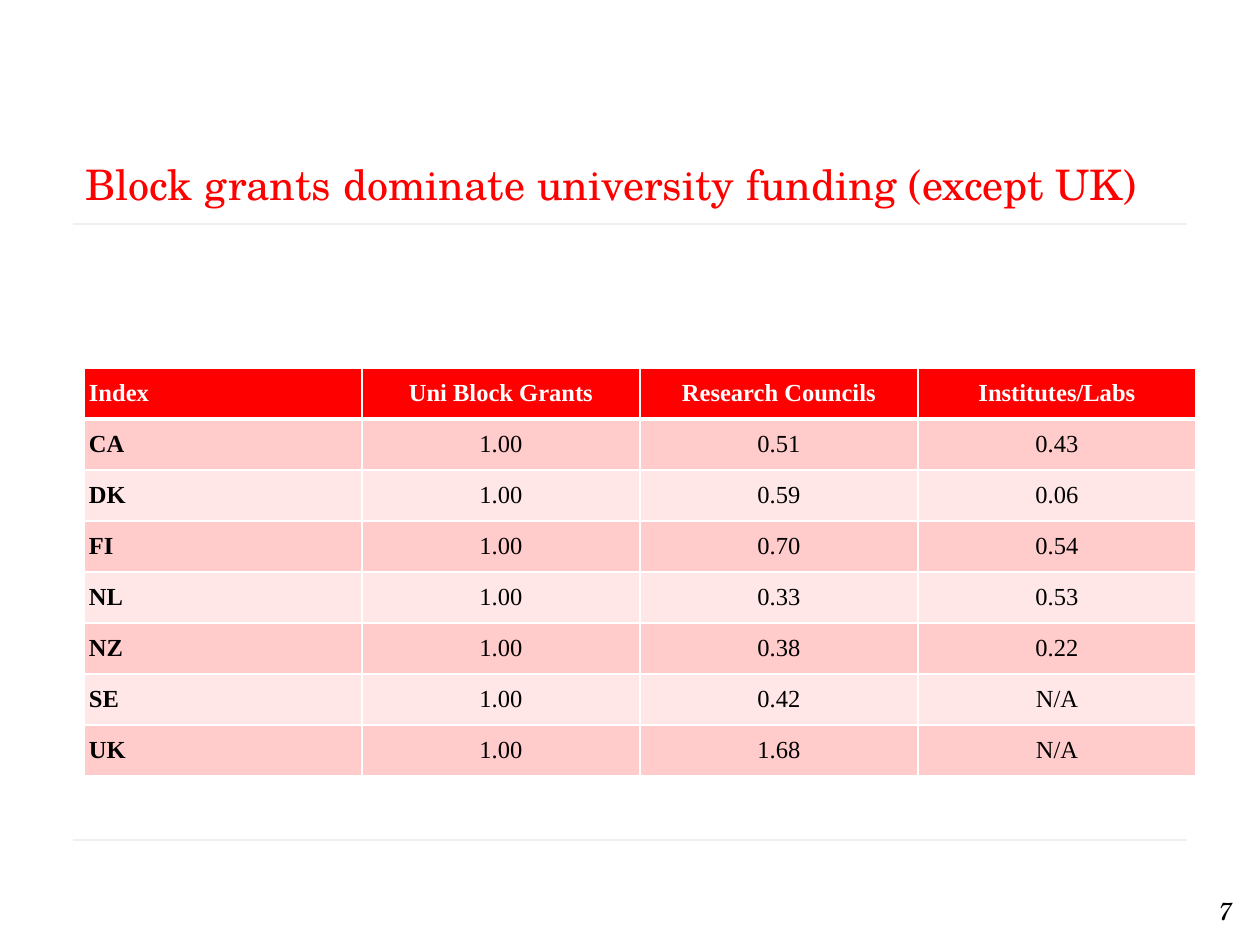
from lxml import etree
from pptx import Presentation
from pptx.dml.color import RGBColor
from pptx.enum.shapes import MSO_CONNECTOR
from pptx.enum.text import MSO_ANCHOR, PP_ALIGN
from pptx.oxml import parse_xml
from pptx.oxml.ns import qn
from pptx.util import Emu, Pt

STRAIGHT = MSO_CONNECTOR.STRAIGHT
MIDDLE, TOP = MSO_ANCHOR.MIDDLE, MSO_ANCHOR.TOP
LEFT, CENTER, RIGHT, JUSTIFY = (
    PP_ALIGN.LEFT, PP_ALIGN.CENTER, PP_ALIGN.RIGHT, PP_ALIGN.JUSTIFY)
NS = "http://schemas.openxmlformats.org/drawingml/2006/main"

THEME = {
    "red": "FF0000", "white": "FFFFFF", "black": "000000", "rule": "808080",
    "bands": ("FFCBCB", "FFE7E7"),
    "serif": "TeX Gyre Schola", "table_font": "Times New Roman",
    "title_size": 24, "body_size": 14,
}


def px(n):
    return Emu(round(n * 914400 / 126))


def write(tf, text, align, anchor, color, **font):
    tf.word_wrap = True
    tf.vertical_anchor = anchor
    p = tf.paragraphs[0]
    p.alignment = align
    r = p.add_run()
    r.text = text
    r.font.color.rgb = RGBColor.from_string(color)
    for name, value in font.items():
        setattr(r.font, name, value)


prs = Presentation()
prs.slide_width, prs.slide_height = px(1260), px(945)
s = prs.slides.add_slide(prs.slide_layouts[6])

# Thin rules below the title and above the footer
for y in (840, 224):
    rule = s.shapes.add_connector(STRAIGHT, px(73), px(y), px(1187), px(y))
    rule.line.width = Pt(0.5)
    rule.line.color.rgb = RGBColor.from_string(THEME["rule"])
    color = rule.line._ln.find(".//" + qn("a:srgbClr"))
    etree.SubElement(color, qn("a:alpha")).set("val", "35000")
    etree.SubElement(rule._element.spPr, qn("a:effectLst"))

# Page number and title
body, title = Pt(THEME["body_size"]), Pt(THEME["title_size"])
number_box = s.shapes.add_textbox(px(1096), px(890), px(149), px(41))
write(number_box.text_frame, "7", RIGHT, TOP, THEME["black"],
      name=THEME["serif"], size=body, italic=True)
title_box = s.shapes.add_textbox(px(73), px(147), px(1113), px(73))
write(title_box.text_frame, "Block grants dominate university funding (except UK)",
      LEFT, MIDDLE, THEME["red"], name=THEME["serif"], size=title)

# Funding index table
rows = [
    ("Index", "Uni Block Grants", "Research Councils", "Institutes/Labs"),
    ("CA", "1.00", "0.51", "0.43"),
    ("DK", "1.00", "0.59", "0.06"),
    ("FI", "1.00", "0.70", "0.54"),
    ("NL", "1.00", "0.33", "0.53"),
    ("NZ", "1.00", "0.38", "0.22"),
    ("SE", "1.00", "0.42", "N/A"),
    ("UK", "1.00", "1.68", "N/A"),
]
COL_W, ROW_H = 278, 51
table = s.shapes.add_table(len(rows), len(rows[0]), px(84), px(368),
                           px(COL_W * len(rows[0])), px(ROW_H * len(rows))).table
for col in table.columns:
    col.width = px(COL_W)
for row in table.rows:
    row.height = px(ROW_H)

for i, values in enumerate(rows):
    header = i == 0
    fill = THEME["red"] if header else THEME["bands"][(i - 1) % 2]
    # The line between header and body is heavier than the rest
    borders = {"L": 1, "R": 1, "T": 3 if i == 1 else 1, "B": 3 if header else 1}
    for j, text in enumerate(values):
        cell = table.cell(i, j)
        for side in ("left", "right", "top", "bottom"):
            setattr(cell, f"margin_{side}", px(5))
        cell.fill.solid()
        cell.fill.fore_color.rgb = RGBColor.from_string(fill)
        write(cell.text_frame, text, CENTER if j else JUSTIFY, MIDDLE,
              THEME["white"] if header else THEME["black"],
              name=THEME["table_font"], size=body, bold=header or j == 0)
        cell.vertical_anchor = MIDDLE
        tcPr = cell._tc.get_or_add_tcPr()
        for k, (side, width) in enumerate(borders.items()):
            tcPr.insert(k, parse_xml(
                f'<a:ln{side} xmlns:a="{NS}" w="{Pt(width)}"><a:solidFill>'
                f'<a:srgbClr val="{THEME["white"]}"/></a:solidFill></a:ln{side}>'))

prs.save("out.pptx")
